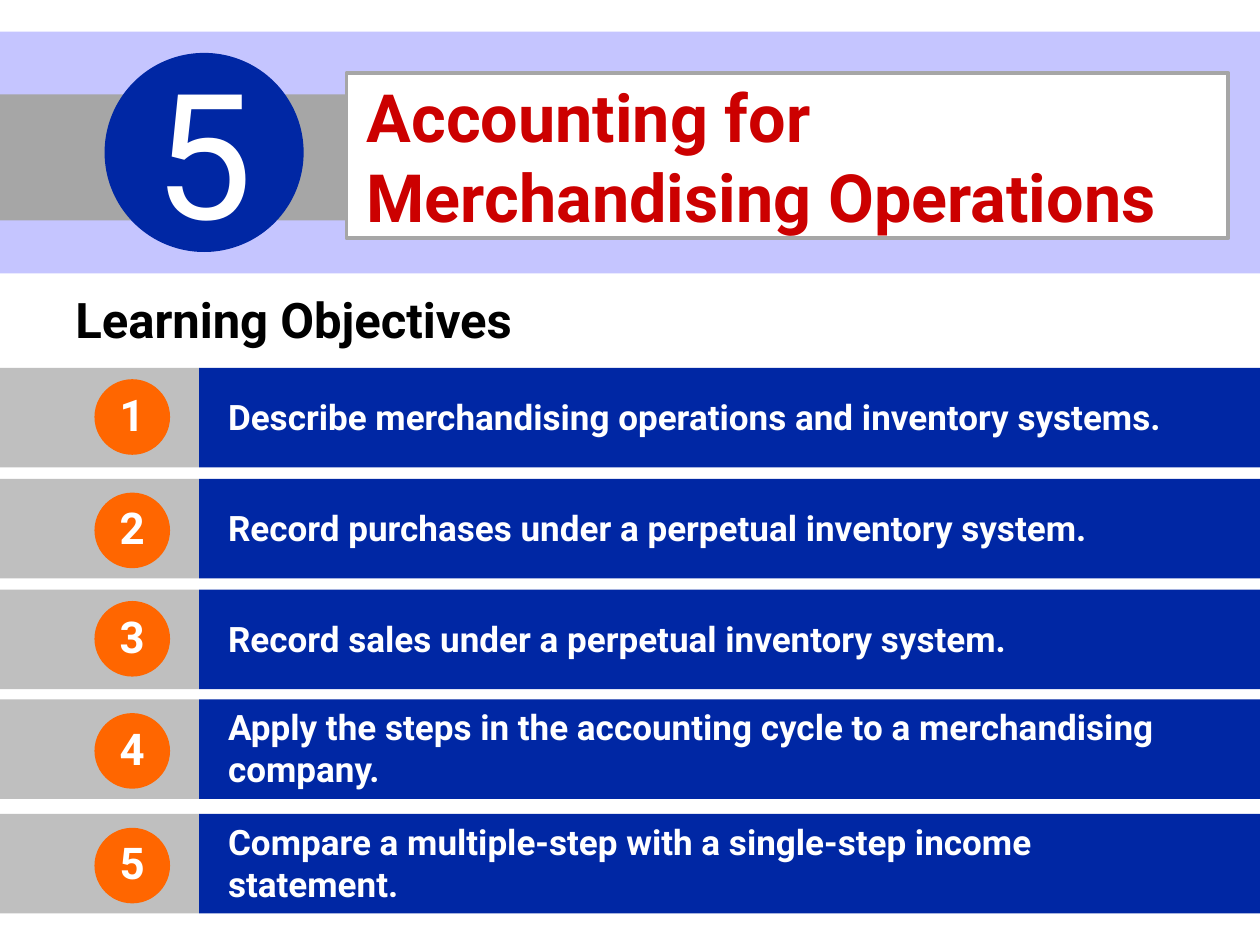
from pptx import Presentation
from pptx.dml.color import RGBColor
from pptx.enum.shapes import MSO_SHAPE
from pptx.enum.text import MSO_ANCHOR, MSO_AUTO_SIZE, PP_ALIGN
from pptx.util import Emu, Pt

RECTANGLE, OVAL = MSO_SHAPE.RECTANGLE, MSO_SHAPE.OVAL
LEFT, CENTER = PP_ALIGN.LEFT, PP_ALIGN.CENTER
TOP, MIDDLE = MSO_ANCHOR.TOP, MSO_ANCHOR.MIDDLE
NO_AUTOFIT = MSO_AUTO_SIZE.NONE

EMU_PER_PX = 9144  # 100 px to the inch
SLIDE_WIDTH, SLIDE_HEIGHT = 1000, 750
TITLE_ONLY_LAYOUT = 5
FONT = "Roboto"

WHITE = RGBColor(0xFF, 0xFF, 0xFF)
BLACK = RGBColor(0x00, 0x00, 0x00)
LAVENDER = RGBColor(0xC5, 0xC5, 0xFF)
MID_GRAY = RGBColor(0xA6, 0xA6, 0xA6)
LIGHT_GRAY = RGBColor(0xBF, 0xBF, 0xBF)
NAVY = RGBColor(0x00, 0x27, 0xA4)
ORANGE = RGBColor(0xFF, 0x66, 0x00)
RED = RGBColor(0xCC, 0x00, 0x00)

ROW_HEIGHT = 79
BADGE_INSETS = (10, 0, 10, 5)
# Row top, badge offset within the row, wording
OBJECTIVES = [
    (292, 9, "Describe merchandising operations and inventory systems."),
    (380, 11, "Record purchases under a perpetual inventory system."),
    (468, 9, "Record sales under a perpetual inventory system."),
    (555, 11, "Apply the steps in the accounting cycle to a merchandising company."),
    (646, 11, "Compare a multiple-step with a single-step income statement."),
]


def px(length):
    return Emu(length * EMU_PER_PX)


def write_text(shape, text, *, size, color=WHITE, bold=True, align=LEFT,
               anchor=MIDDLE, insets=(10, 5, 10, 5)):
    frame = shape.text_frame
    frame.word_wrap = True
    frame.auto_size = NO_AUTOFIT
    frame.vertical_anchor = anchor
    (frame.margin_left, frame.margin_top,
     frame.margin_right, frame.margin_bottom) = map(px, insets)
    frame.text = text
    paragraph = frame.paragraphs[0]
    paragraph.alignment = align
    font = paragraph.runs[0].font
    font.name, font.size, font.bold = FONT, Pt(size), bold
    font.color.rgb = color


def add_block(slide, kind, left, top, width, height, color):
    shape = slide.shapes.add_shape(kind, px(left), px(top), px(width), px(height))
    shape.shadow.inherit = False
    shape.fill.solid()
    shape.fill.fore_color.rgb = color
    shape.line.fill.background()
    return shape


def add_header(slide, left, top, width, height, number, text):
    # Background band and the gray bar that leads to the title
    add_block(slide, RECTANGLE, left, top, width, height, LAVENDER)
    bar = add_block(slide, RECTANGLE, left, top + 50, 275, 100, MID_GRAY)

    # Title box, lifted in front of the band
    title = slide.shapes.title
    bar.element.addnext(title.element)
    title.left, title.top = px(left + 275), px(top + 33)
    title.width, title.height = px(width - 300), px(131)
    title.fill.solid()
    title.fill.fore_color.rgb = WHITE
    title.line.color.rgb = MID_GRAY
    title.line.width = Pt(2.25)
    write_text(title, text, size=38, color=RED, insets=(16, 5, 10, 5))

    # Chapter number
    disc = add_block(slide, OVAL, left + 83, top + 17, 158, 158, NAVY)
    write_text(disc, number, size=100, bold=False, align=CENTER,
               insets=BADGE_INSETS)


def add_heading(slide, left, top, width, height, text):
    heading = slide.shapes.add_textbox(px(left), px(top), px(width), px(height))
    write_text(heading, text, size=28, color=BLACK, anchor=TOP)


def add_objective(slide, left, top, width, height, number, badge_offset, text):
    margin_width = 158
    add_block(slide, RECTANGLE, left, top, margin_width, height, LIGHT_GRAY)
    panel = add_block(slide, RECTANGLE, left + margin_width, top,
                      width - margin_width, height, NAVY)
    write_text(panel, text, size=20, insets=(23, 3, 40, 5))
    badge = add_block(slide, OVAL, left + 75, top + badge_offset, 60, 60, ORANGE)
    write_text(badge, str(number), size=25, align=CENTER, insets=BADGE_INSETS)


def main():
    presentation = Presentation()
    presentation.slide_width = px(SLIDE_WIDTH)
    presentation.slide_height = px(SLIDE_HEIGHT)
    layout = presentation.slide_layouts[TITLE_ONLY_LAYOUT]
    slide = presentation.slides.add_slide(layout)

    add_header(slide, 0, 25, SLIDE_WIDTH, 192, "5",
               "Accounting for Merchandising Operations")
    add_heading(slide, 50, 225, 483, 57, "Learning Objectives")
    for number, (top, badge_offset, text) in enumerate(OBJECTIVES, start=1):
        add_objective(slide, 0, top, SLIDE_WIDTH, ROW_HEIGHT,
                      number, badge_offset, text)

    presentation.save("out.pptx")


if __name__ == "__main__":
    main()
